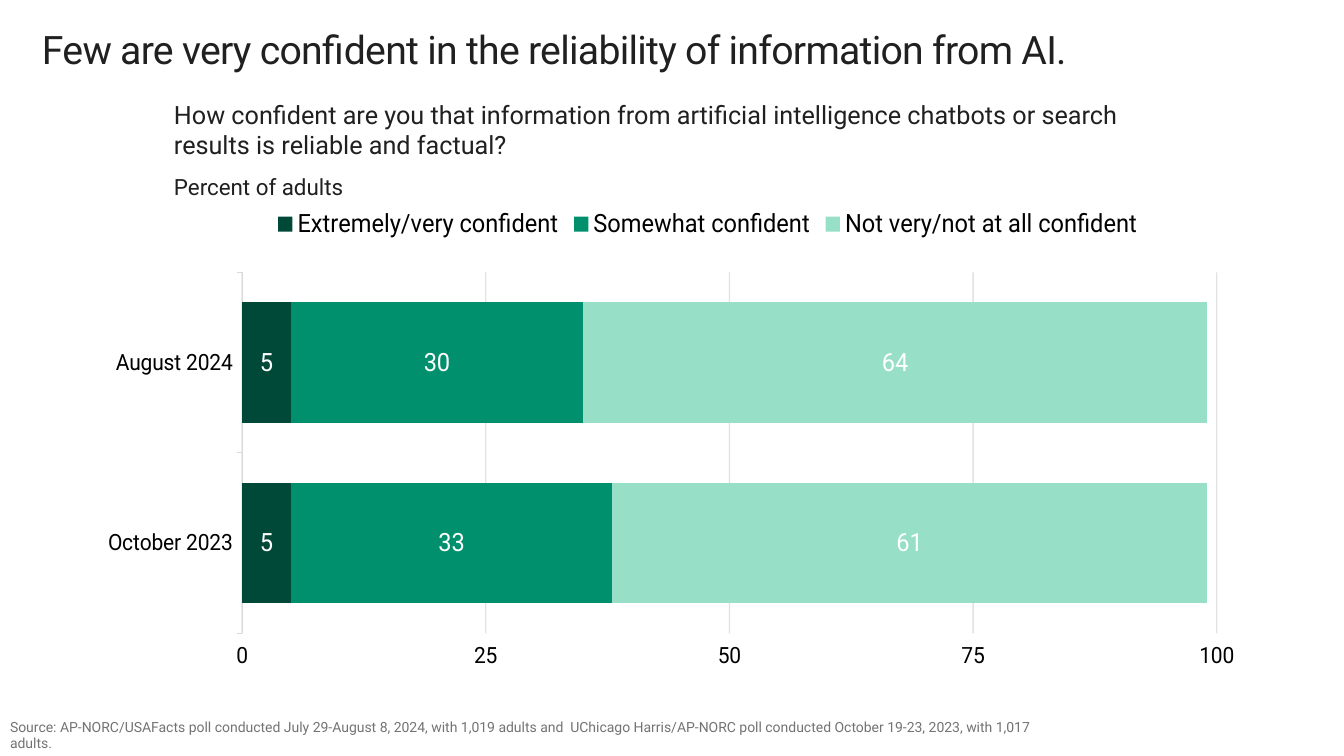
import pptx
import pptx.chart.data
import pptx.dml.color
import pptx.enum.chart
import pptx.enum.text
import pptx.oxml
import pptx.oxml.ns
import pptx.util

SCALE = 914400 / 100.8  # EMU in one px
FACE = "Roboto"
INK, GREY, BLACK, WHITE = "202020", "727373", "000000", "FFFFFF"
DATES = ["October 2023", "August 2024"]
SERIES = [
    ("Extremely/very confident", (5, 5), "004837"),
    ("Somewhat confident", (33, 30), "00906E"),
    ("Not very/not at all confident", (61, 64), "97DFC7"),
]
PLOT = {"x": 0.06, "y": 0.154, "w": 0.921, "h": 0.737}


def px(num):
    return pptx.util.Emu(round(num * SCALE))


def color(code):
    return pptx.dml.color.RGBColor.from_string(code)


def assign(item, vals):
    for name, val in vals.items():
        setattr(item, name, val)


def style(font, size, code):
    assign(font, {"name": FACE, "size": pptx.util.Pt(size), "bold": False})
    font.color.rgb = color(code)


def add_text(slide, box, lines, code, inset=0, frame=None, para=None):
    """Add a text box; lines holds (text, size) pairs."""
    text = slide.shapes.add_textbox(*map(px, box)).text_frame
    assign(text, {"word_wrap": True, "margin_left": px(inset),
                  "margin_right": 0, "margin_top": 0, "margin_bottom": 0})
    assign(text, frame or {})
    for i, (words, size) in enumerate(lines):
        part = text.add_paragraph() if i else text.paragraphs[0]
        if i:
            part.space_before = pptx.util.Pt(10)
        assign(part, para or {})
        run = part.add_run()
        run.text = words
        style(run.font, size, code)
    return text


def set_line(line, code, width):
    line.color.rgb = color(code)
    line.width = pptx.util.Pt(width)


def set_plot(chart):
    """Fix the inner plot area inside the chart frame."""
    tag = pptx.oxml.ns.qn
    area = chart.element.find(tag("c:chart")).find(tag("c:plotArea"))
    for old in area.findall(tag("c:layout")):
        area.remove(old)
    sizes = "".join(f'<c:{k} val="{v}"/>' for k, v in PLOT.items())
    area.insert(0, pptx.oxml.parse_xml(
        f'<c:layout {pptx.oxml.ns.nsdecls("c")}><c:manualLayout>'
        '<c:layoutTarget val="inner"/><c:xMode val="edge"/>'
        f'<c:yMode val="edge"/>{sizes}</c:manualLayout></c:layout>'))


def set_axes(chart):
    kinds = pptx.enum.chart
    dates, share = chart.category_axis, chart.value_axis
    for axis in (dates, share):
        style(axis.tick_labels.font, 16, BLACK)
        axis.minor_tick_mark = kinds.XL_TICK_MARK.NONE
    assign(dates, {"major_tick_mark": kinds.XL_TICK_MARK.OUTSIDE,
                   "has_major_gridlines": False})
    set_line(dates.format.line, "D9D9D9", 0.75)
    assign(share, {"minimum_scale": 0, "maximum_scale": 100, "major_unit": 25,
                   "major_tick_mark": kinds.XL_TICK_MARK.NONE,
                   "tick_label_position": kinds.XL_TICK_LABEL_POSITION.LOW,
                   "has_major_gridlines": True})
    share.format.line.fill.background()

    # Half-transparent grid lines
    grid = share.major_gridlines.format.line
    set_line(grid, "C7C7C7", 1)
    tint = next(share.major_gridlines._xAx.iter(pptx.oxml.ns.qn("a:srgbClr")))
    tint.append(pptx.oxml.parse_xml(
        f'<a:alpha {pptx.oxml.ns.nsdecls("a")} val="50000"/>'))


def add_bars(slide, box):
    kinds = pptx.enum.chart
    data = pptx.chart.data.CategoryChartData()
    data.categories = DATES
    for name, vals, _ in SERIES:
        data.add_series(name, vals)
    chart = slide.shapes.add_chart(
        kinds.XL_CHART_TYPE.BAR_STACKED, *map(px, box), data).chart
    assign(chart, {"has_title": False, "has_legend": True})
    style(chart.font, 16, BLACK)
    assign(chart.legend, {"position": kinds.XL_LEGEND_POSITION.TOP,
                          "include_in_layout": False})
    style(chart.legend.font, 18, BLACK)

    # Bars and their labels
    plot = chart.plots[0]
    assign(plot, {"gap_width": 50, "overlap": 100, "vary_by_categories": False})
    for bars, (_, _, code) in zip(plot.series, SERIES):
        bars.format.fill.solid()
        bars.format.fill.fore_color.rgb = color(code)
        labels = bars.data_labels
        assign(labels, {"show_value": True,
                        "position": kinds.XL_LABEL_POSITION.CENTER})
        style(labels.font, 18, WHITE)
    set_axes(chart)
    set_plot(chart)


def main():
    deck = pptx.Presentation()
    assign(deck, {"slide_width": px(1344), "slide_height": px(756)})
    slide = deck.slides.add_slide(deck.slide_layouts[6])

    # Title, set slightly tight
    title = add_text(
        slide, (42, 31, 1184, 69),
        [("Few are very confident in the reliability of information from AI.", 28)],
        INK, para={"line_spacing": 0.9})
    title.paragraphs[0].runs[0].font._element.set("spc", "-50")

    # Chart
    add_bars(slide, (108, 197, 1129, 490))

    # Source
    add_text(
        slide, (0, 722, 1034, 27),
        [("Source: AP-NORC/USAFacts poll conducted July 29-August 8, 2024, "
          "with 1,019 adults and  UChicago Harris/AP-NORC poll conducted "
          "October 19-23, 2023, with 1,017 adults.", 10)],
        GREY, 10, {"vertical_anchor": pptx.enum.text.MSO_ANCHOR.MIDDLE},
        {"line_spacing": 0.95})

    # Question
    add_text(
        slide, (164, 99, 1030, 147),
        [("How confident are you that information from artificial intelligence "
          "chatbots or search results is reliable and factual?", 18),
         ("Percent of adults", 16)],
        INK, 10)

    deck.save("out.pptx")


if __name__ == "__main__":
    main()
